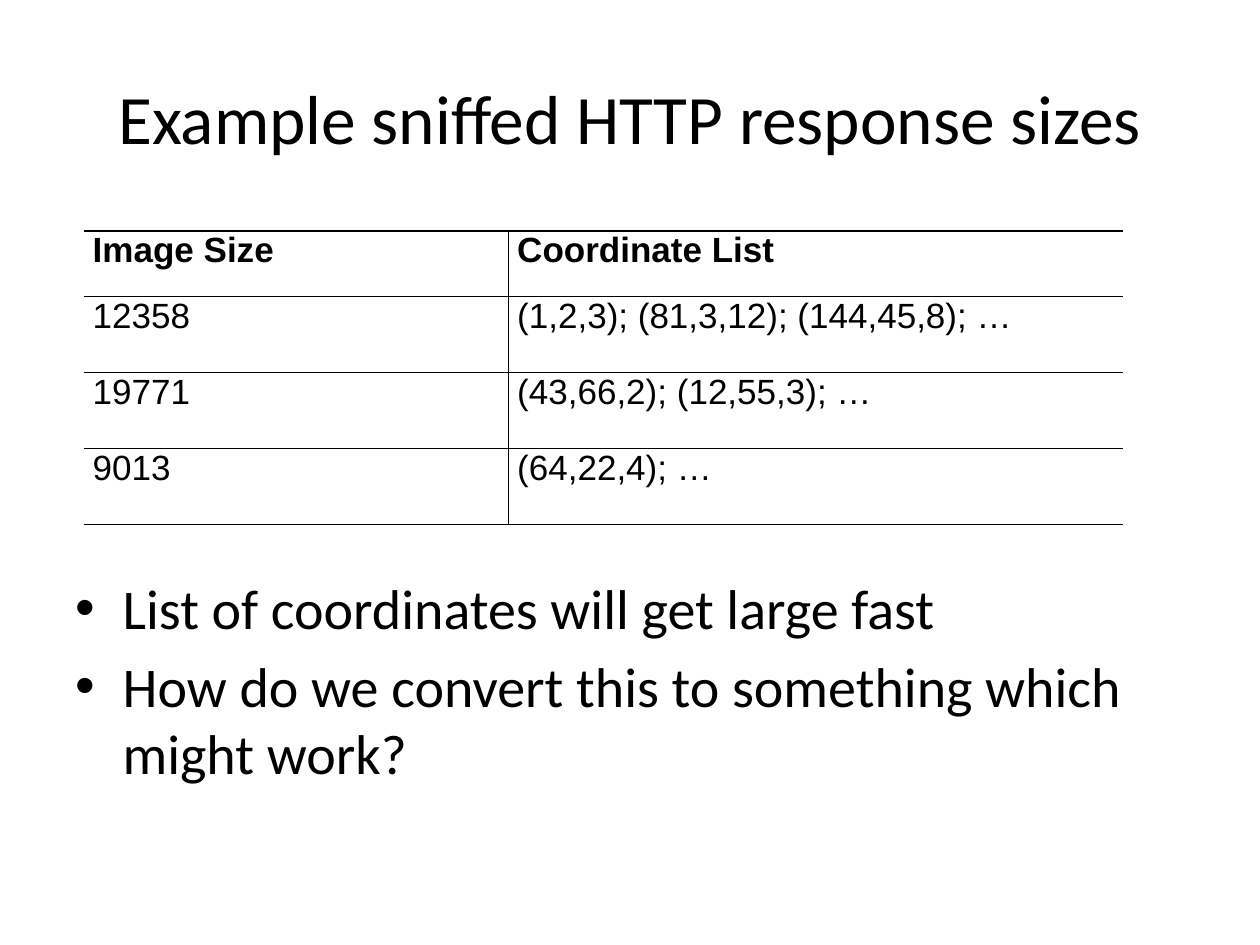
from dataclasses import dataclass

from lxml.etree import SubElement as Sub
from pptx import Presentation
from pptx.dml.color import RGBColor
from pptx.enum.text import MSO_ANCHOR as Anchor, PP_ALIGN as Align
from pptx.oxml.ns import qn
from pptx.util import Pt

BLACK = RGBColor(0, 0, 0)
COLS = (242.6, 351.4)
ROWS = (37.4, 43.4, 43.4, 43.4)


@dataclass
class Box:
    left: float
    top: float
    width: float
    height: float

    def area(self) -> tuple:
        return Pt(self.left), Pt(self.top), Pt(self.width), Pt(self.height)


@dataclass
class Entry:
    size: str
    coords: str
    bold: bool = False


ENTRIES = (
    Entry("Image Size", "Coordinate List", bold=True),
    Entry("12358", "(1,2,3); (81,3,12); (144,45,8); …"),
    Entry("19771", "(43,66,2); (12,55,3); …"),
    Entry("9013", "(64,22,4); …"),
)
POINTS = (
    "List of coordinates will get large fast",
    "How do we convert this to something which might work?",
)


def write(para, text: str, *, size: float, font: str = "Calibri",
          bold: bool = False, align=Align.LEFT, before: float = 0,
          after: float = 0, bullet: str = "", indent: float = 0) -> None:
    para.alignment = align
    para.space_before, para.space_after = Pt(before), Pt(after)
    run = para.add_run()
    run.text = text
    run.font.name, run.font.size, run.font.bold = font, Pt(size), bold
    run.font.color.rgb = BLACK
    if bullet:
        props = para._p.get_or_add_pPr()
        props.set("marL", str(Pt(indent)))
        props.set("indent", str(-Pt(indent)))
        Sub(props, qn("a:buFont"), typeface="Arial")
        Sub(props, qn("a:buChar"), char=bullet)


def add_text(slide, box: Box, lines: tuple, anchor=Anchor.TOP, **form) -> None:
    frame = slide.shapes.add_textbox(*box.area()).text_frame
    frame.word_wrap = True
    frame.vertical_anchor = anchor
    for i, line in enumerate(lines):
        para = frame.add_paragraph() if i else frame.paragraphs[0]
        write(para, line, **form)


def rule(cell, sides: str) -> None:
    props = cell._tc.get_or_add_tcPr()
    for side in "LRTB":
        line = Sub(props, qn(f"a:ln{side}"), w=str(Pt(1)))
        if side in sides:
            fill = Sub(line, qn("a:solidFill"))
            Sub(fill, qn("a:srgbClr"), val=str(BLACK))
        else:
            Sub(line, qn("a:noFill"))
    cell.fill.background()


def add_grid(slide, box: Box, entries: tuple) -> None:
    table = slide.shapes.add_table(len(ROWS), len(COLS), *box.area()).table
    table.first_row = table.horz_banding = False
    for col, width in zip(table.columns, COLS):
        col.width = Pt(width)
    for row, height, entry in zip(table.rows, ROWS, entries):
        row.height = Pt(height)
        parts = (entry.size, entry.coords)
        for cell, text, sides in zip(row.cells, parts, ("RTB", "LTB")):
            cell.margin_left = cell.margin_right = Pt(5)
            cell.margin_top = cell.margin_bottom = Pt(0)
            write(cell.text_frame.paragraphs[0], text, size=20, font="Arial",
                  bold=entry.bold, before=6, after=6)
            rule(cell, sides)


def main() -> None:
    deck = Presentation()
    deck.slide_width, deck.slide_height = Pt(720), Pt(540)
    slide = deck.slides.add_slide(deck.slide_layouts[6])
    add_text(slide, Box(36, 21.6, 648, 90),
             ("Example sniffed HTTP response sizes",),
             anchor=Anchor.MIDDLE, size=39.6, align=Align.CENTER)
    add_grid(slide, Box(48, 132, sum(COLS), sum(ROWS)), ENTRIES)
    add_text(slide, Box(36, 324, 648, 164), POINTS,
             size=32, before=6.4, bullet="•", indent=27)
    deck.save("out.pptx")


if __name__ == "__main__":
    main()
